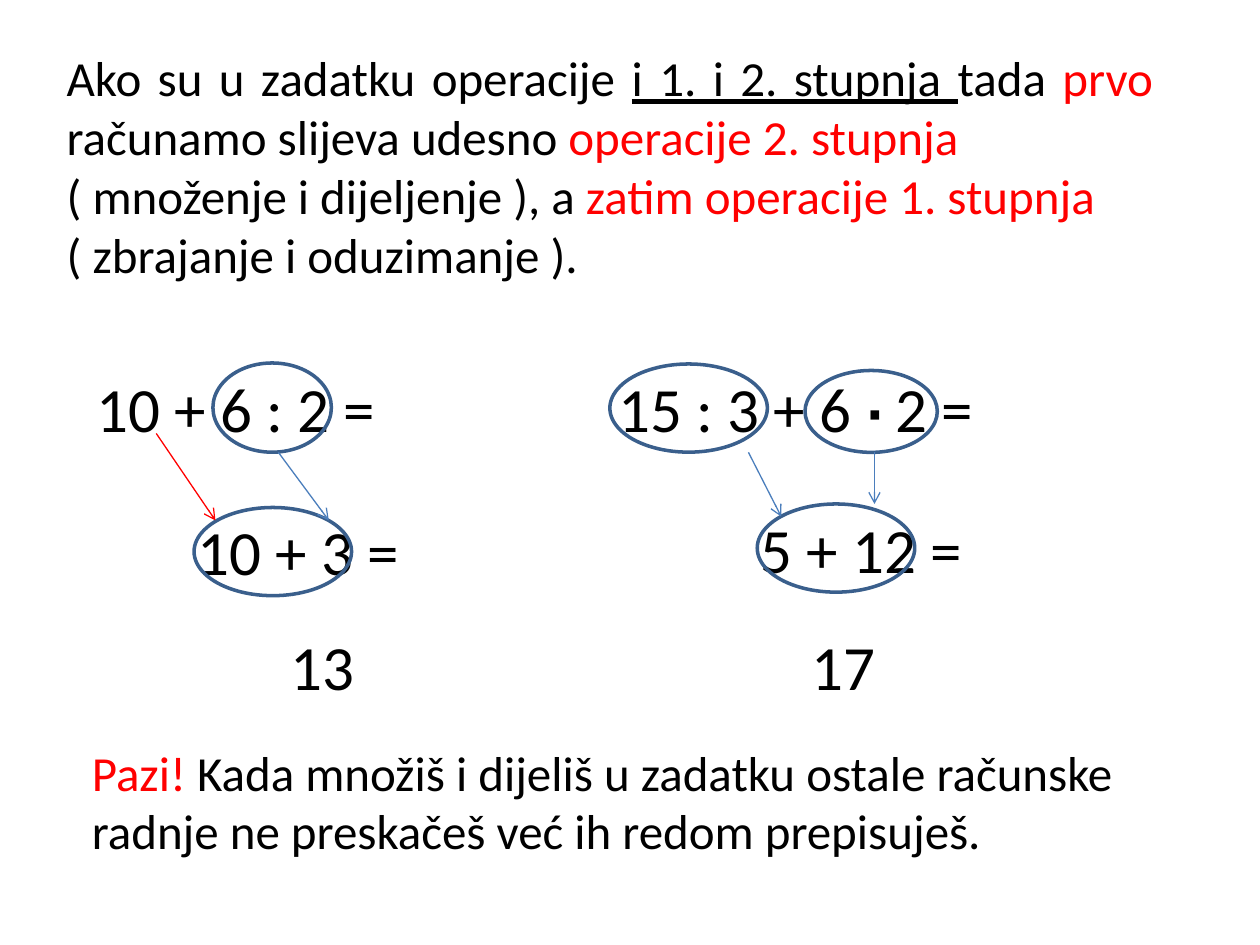
from dataclasses import dataclass

from lxml.etree import SubElement
from pptx import Presentation
from pptx.dml.color import RGBColor
from pptx.enum.shapes import MSO_CONNECTOR as Connector, MSO_SHAPE as Shape
from pptx.enum.text import MSO_AUTO_SIZE as AutoSize, PP_ALIGN as Align
from pptx.oxml.ns import qn
from pptx.util import Pt


@dataclass(frozen=True)
class Theme:
    font: str = "Calibri"
    black: str = "000000"
    red: str = "FF0000"
    ring: str = "3A5F8C"
    arrow: str = "4B7EBC"
    prose_size: int = 28
    sum_size: int = 36
    ring_width: float = 2
    arrow_width: float = 0.75


THEME = Theme()
RED = {"color": THEME.red}
UNDERLINED = {"underline": True}
DOT = {"size": THEME.prose_size, "bold": True}

# A paragraph is a list of (text, style) runs.
RULE = [
    [("Ako su u zadatku operacije ", {}), ("i 1. i 2. stupnja ", UNDERLINED),
     ("tada ", {}), ("prvo", RED), (" računamo slijeva udesno ", {}),
     ("operacije 2. stupnja ", RED)],
    [("( množenje i dijeljenje ), a ", {}), ("zatim operacije 1. stupnja ", RED)],
    [("( zbrajanje i oduzimanje ).", {})],
]
WARNING = [
    [("Pazi!", RED),
     (" Kada množiš i dijeliš u zadatku ostale računske radnje "
      "ne preskačeš već ih redom prepisuješ.", {})],
]

# Left, top, width, runs
SUM_HEIGHT = 51
SUMS = [
    (48.2, 207.4, 204, [("10 + 6 : 2 =", {})]),
    (105.8, 289.4, 158, [("10 + 3 =", {})]),
    (159.1, 355, 79, [("13", {})]),
    (346.3, 207.4, 263, [("15 : 3 + 6 ", {}), ("∙ ", DOT), ("2 =", {})]),
    (427.7, 288, 130, [("5 + 12 =", {})]),
    (456.5, 355, 79, [("17", {})]),
]
# Left, top, width, height
RINGS = [
    (121.7, 207.4, 67.7, 51),
    (110.9, 290, 90, 50.4),
    (460, 211.7, 75.6, 46.8),
    (348.5, 208, 90, 50.4),
    (432.7, 288, 90, 50.4),
]
# Start x, start y, end x, end y, colour
ARROWS = [
    (89.3, 247.7, 123.1, 297.4, THEME.red),
    (159.1, 258.5, 187.9, 297.4, THEME.arrow),
    (427.7, 258.5, 446.4, 295.2, THEME.arrow),
    (499.7, 258.5, 499.7, 288, THEME.arrow),
]


def points(*lengths):
    return [Pt(length) for length in lengths]


def add_text(page, frame, paragraphs, size, align=Align.LEFT):
    box = page.shapes.add_textbox(*points(*frame))
    text_frame = box.text_frame
    text_frame.word_wrap = True
    text_frame.auto_size = AutoSize.SHAPE_TO_FIT_TEXT
    for index, runs in enumerate(paragraphs):
        para = text_frame.add_paragraph() if index else text_frame.paragraphs[0]
        para.alignment = align
        for text, style in runs:
            span = para.add_run()
            span.text = text
            font = span.font
            font.name = THEME.font
            font.size = Pt(style.get("size", size))
            font.bold = style.get("bold", False)
            font.underline = style.get("underline", False)
            font.color.rgb = RGBColor.from_string(style.get("color", THEME.black))


def set_line(shape, color, width):
    shape.line.color.rgb = RGBColor.from_string(color)
    shape.line.width = Pt(width)


def add_ring(page, frame):
    ring = page.shapes.add_shape(Shape.OVAL, *points(*frame))
    ring.shadow.inherit = False
    ring.fill.background()
    set_line(ring, THEME.ring, THEME.ring_width)


def add_arrow(page, ends, color):
    arrow = page.shapes.add_connector(Connector.STRAIGHT, *points(*ends))
    set_line(arrow, color, THEME.arrow_width)
    SubElement(arrow.line._get_or_add_ln(), qn("a:tailEnd"), type="arrow")
    SubElement(arrow._element.spPr, qn("a:effectLst"))


def main():
    deck = Presentation()
    deck.slide_width, deck.slide_height = points(720, 540)
    page = deck.slides.add_slide(deck.slide_layouts[6])

    add_text(page, (31, 23.8, 635, 143), RULE, THEME.prose_size, Align.JUSTIFY)
    for left, top, width, runs in SUMS:
        add_text(page, (left, top, width, SUM_HEIGHT), [runs], THEME.sum_size)
    for frame in RINGS:
        add_ring(page, frame)
    for *ends, color in ARROWS:
        add_arrow(page, ends, color)
    add_text(page, (45.4, 420.5, 632, 75), WARNING, THEME.prose_size)

    deck.save("out.pptx")


if __name__ == "__main__":
    main()
